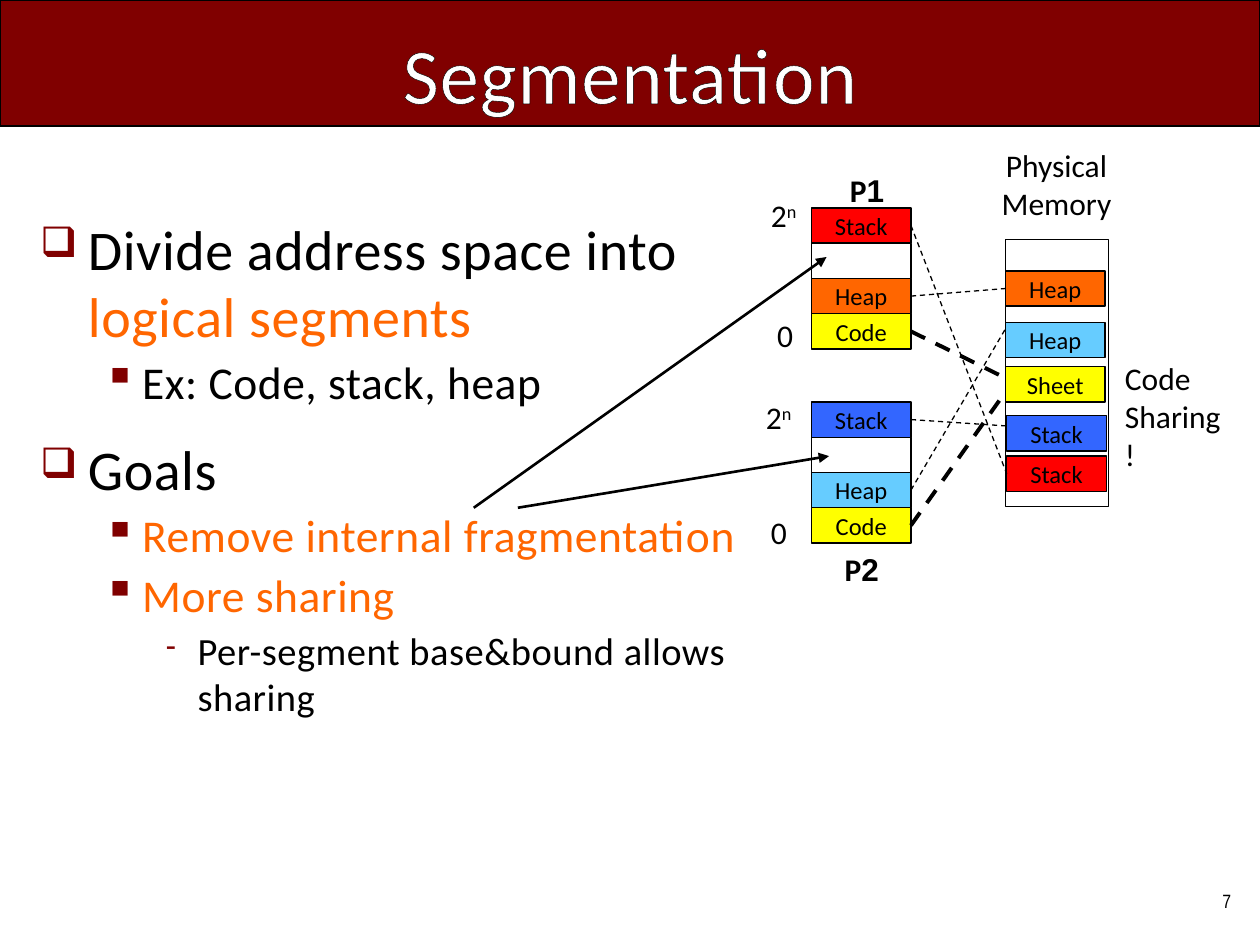
from lxml.etree import SubElement
from pptx import Presentation
from pptx.dml.color import RGBColor
from pptx.enum.dml import MSO_LINE
from pptx.enum.shapes import MSO_CONNECTOR, MSO_SHAPE
from pptx.enum.text import MSO_ANCHOR, PP_ALIGN
from pptx.oxml.ns import qn
from pptx.util import Inches, Pt

BLACK = RGBColor(0x00, 0x00, 0x00)
WHITE = RGBColor(0xFF, 0xFF, 0xFF)
MAROON = RGBColor(0x80, 0x00, 0x00)
ORANGE = RGBColor(0xFF, 0x66, 0x00)
RED = RGBColor(0xFF, 0x00, 0x00)
YELLOW = RGBColor(0xFF, 0xFF, 0x00)
BLUE = RGBColor(0x33, 0x66, 0xFF)
SKY = RGBColor(0x66, 0xCC, 0xFF)

CELL_W, CELL_H = 0.79, 0.28
STACK_X, MEM_X = 6.44, 7.98

LEVELS = [
    {"size": 32, "left": 0.38, "hang": 0.38, "before": 15, "mark": "❑", "scale": 75},
    {"size": 26, "left": 0.81, "hang": 0.31, "before": 3, "mark": "▪", "scale": 100},
    {"size": 22, "left": 1.25, "hang": 0.25, "before": 3, "mark": "-", "scale": 75},
]
POINTS = [
    (0, [("Divide address space into ", BLACK), ("logical segments", ORANGE)]),
    (1, [("Ex: Code, stack, heap", BLACK)]),
    (0, [("Goals", BLACK)]),
    (1, [("Remove internal fragmentation", ORANGE)]),
    (1, [("More sharing", ORANGE)]),
    (2, [("Per-segment base&bound allows sharing", BLACK)]),
]


def add_run(para, text, size, color=BLACK, font="Calibri", bold=False):
    """Add one formatted run and return it."""
    run = para.add_run()
    run.text = text
    run.font.size = Pt(size)
    run.font.name = font
    run.font.bold = bold
    run.font.color.rgb = color
    return run


def space_run(run, points):
    """Set the letter spacing of a run in points."""
    run.font._element.set("spc", str(round(points * 100)))


def add_label(slide, box, lines, align=PP_ALIGN.LEFT, wrap=True):
    """Add a text box whose lines are lists of (text, style) runs."""
    frame = slide.shapes.add_textbox(*map(Inches, box)).text_frame
    frame.word_wrap = wrap
    for i, line in enumerate(lines):
        para = frame.paragraphs[0] if i == 0 else frame.add_paragraph()
        para.alignment = align
        for text, style in line:
            add_run(para, text, **{"size": 18, **style})
    return frame


def add_limit(slide, left, top, base, power=""):
    """Add an address limit with an optional raised power."""
    frame = add_label(slide, (left, top, 0.58, 0.4), [[(base, {})]])
    if power:
        run = add_run(frame.paragraphs[0], power, 18)
        run.font._element.set("baseline", "30000")


def add_cell(slide, left, top, fill, text="", width=CELL_W, height=CELL_H):
    """Add an outlined memory block with a centred name."""
    cell = slide.shapes.add_shape(
        MSO_SHAPE.RECTANGLE, *map(Inches, (left, top, width, height)))
    cell.shadow.inherit = False
    cell.fill.solid()
    cell.fill.fore_color.rgb = fill
    cell.line.color.rgb = BLACK
    cell.line.width = Pt(0.75)
    if text:
        frame = cell.text_frame
        frame.word_wrap = False
        frame.vertical_anchor = MSO_ANCHOR.MIDDLE
        para = frame.paragraphs[0]
        para.alignment = PP_ALIGN.CENTER
        add_run(para, text, 14)
    return cell


def add_stack(slide, top, rows):
    """Stack blocks from the top down and return them."""
    return [add_cell(slide, STACK_X, top + i * CELL_H, fill, text)
            for i, (text, fill) in enumerate(rows)]


def add_line(slide, start, end, width):
    """Add a plain black line between two points."""
    line = slide.shapes.add_connector(
        MSO_CONNECTOR.STRAIGHT, *map(Inches, (*start, *end)))
    line.line.color.rgb = BLACK
    line.line.width = Pt(width)
    SubElement(line._element.spPr, qn("a:effectLst"))
    return line


def add_link(slide, cell, goal, width=0.75):
    """Add a dashed line from a block's right side to a block or point."""
    joined = not isinstance(goal, tuple)
    end = (MEM_X, 0) if joined else goal
    line = add_line(slide, (STACK_X + CELL_W, 0), end, width)
    line.line.dash_style = MSO_LINE.DASH
    line.begin_connect(cell, 3)
    if joined:
        line.end_connect(goal, 1)


def add_arrow(slide, start, end):
    """Add a solid line with a triangle at its end."""
    line = add_line(slide, start, end, 1.5)
    SubElement(line.line._get_or_add_ln(), qn("a:tailEnd"), type="triangle")


def set_title(slide):
    """Turn the title placeholder into the top banner."""
    title = slide.shapes.title
    title.left, title.top, title.width, title.height = map(Inches, (0, 0, 10, 1))
    title.fill.solid()
    title.fill.fore_color.rgb = MAROON
    title.line.color.rgb = BLACK
    title.line.width = Pt(0.75)
    frame = title.text_frame
    frame.vertical_anchor = MSO_ANCHOR.BOTTOM
    para = frame.paragraphs[0]
    para.alignment = PP_ALIGN.CENTER
    run = add_run(para, "Segmentation", 45, WHITE)
    space_run(run, 0.5)
    edge = SubElement(run.font._element, qn("a:ln"), w=str(Pt(1)))
    fill = SubElement(edge, qn("a:solidFill"))
    SubElement(fill, qn("a:srgbClr"), val=str(BLACK))
    run.font._element.insert(0, edge)


def set_bullet(para, level):
    """Apply the indent, spacing and bullet of an outline level."""
    look = LEVELS[level]
    para.level = level
    para.space_before = Pt(look["before"])
    props = para._p.get_or_add_pPr()
    props.set("marL", str(Inches(look["left"])))
    props.set("indent", str(-Inches(look["hang"])))
    color = SubElement(props, qn("a:buClr"))
    SubElement(color, qn("a:srgbClr"), val=str(MAROON))
    SubElement(props, qn("a:buSzPct"), val=str(look["scale"] * 1000))
    SubElement(props, qn("a:buChar"), char=look["mark"])


def add_points(slide):
    """Add the bulleted outline."""
    box = slide.shapes.add_textbox(*map(Inches, (0.22, 1.65, 5.87, 5.24)))
    frame = box.text_frame
    frame.word_wrap = True
    for i, (level, runs) in enumerate(POINTS):
        para = frame.paragraphs[0] if i == 0 else frame.add_paragraph()
        set_bullet(para, level)
        for text, color in runs:
            space_run(add_run(para, text, LEVELS[level]["size"], color), 0.3)


def add_diagram(slide):
    """Add both address spaces, physical memory and their links."""
    stack1, _, heap1, code1 = add_stack(slide, 1.65, [
        ("Stack", RED), ("", WHITE), ("Heap", ORANGE), ("Code", YELLOW)])
    stack2, _, heap2, code2 = add_stack(slide, 3.19, [
        ("Stack", BLUE), ("", WHITE), ("Heap", SKY), ("Code", YELLOW)])
    add_cell(slide, MEM_X, 1.9, WHITE, width=0.82, height=2.12)
    mem_heap = add_cell(slide, MEM_X, 2.15, ORANGE, "Heap")
    add_cell(slide, MEM_X, 2.56, SKY, "Heap")
    add_cell(slide, MEM_X, 2.91, YELLOW, "Sheet")
    add_cell(slide, MEM_X + 0.01, 3.3, BLUE, "Stack")
    mem_stack = add_cell(slide, MEM_X + 0.01, 3.62, RED, "Stack")

    add_link(slide, stack1, mem_stack)
    add_link(slide, heap1, mem_heap)
    add_link(slide, code1, (MEM_X, 3), 2.25)
    add_link(slide, stack2, (MEM_X, 3.38))
    add_link(slide, heap2, (MEM_X, 2.61))
    add_link(slide, code2, (MEM_X, 3.11), 2.25)

    for left, top, digit in [(6.62, 1.31, "1"), (6.58, 4.32, "2")]:
        name = [("P", {"bold": True}), (digit, {"bold": True, "font": "Arial"})]
        add_label(slide, (left, top, 0.52, 0.4), [name], PP_ALIGN.CENTER, False)
    add_label(slide, (7.85, 1.11, 1.07, 0.71),
              [[("Physical", {})], [("Memory", {})]], PP_ALIGN.CENTER, False)
    add_label(slide, (8.83, 2.8, 1.01, 0.71), [[("Code", {})], [("Sharing!", {})]])
    add_limit(slide, 6.02, 1.51, "2", "n")
    add_limit(slide, 6.07, 2.46, "0")
    add_limit(slide, 5.98, 3.11, "2", "n")
    add_limit(slide, 6.02, 4.02, "0")
    add_arrow(slide, (3.76, 4.03), (6.56, 2.04))
    add_arrow(slide, (4.11, 4.03), (6.58, 3.62))


def main():
    """Build and save the slide."""
    deck = Presentation()
    deck.slide_width, deck.slide_height = Inches(10), Inches(7.5)
    slide = deck.slides.add_slide(deck.slide_layouts[5])
    set_title(slide)
    add_points(slide)
    add_diagram(slide)
    number = [("7", {"size": 11, "font": "Arial Narrow"})]
    frame = add_label(slide, (8.79, 6.95, 1.08, 0.4), [number], PP_ALIGN.RIGHT)
    frame.vertical_anchor = MSO_ANCHOR.MIDDLE
    deck.save("out.pptx")


if __name__ == "__main__":
    main()
